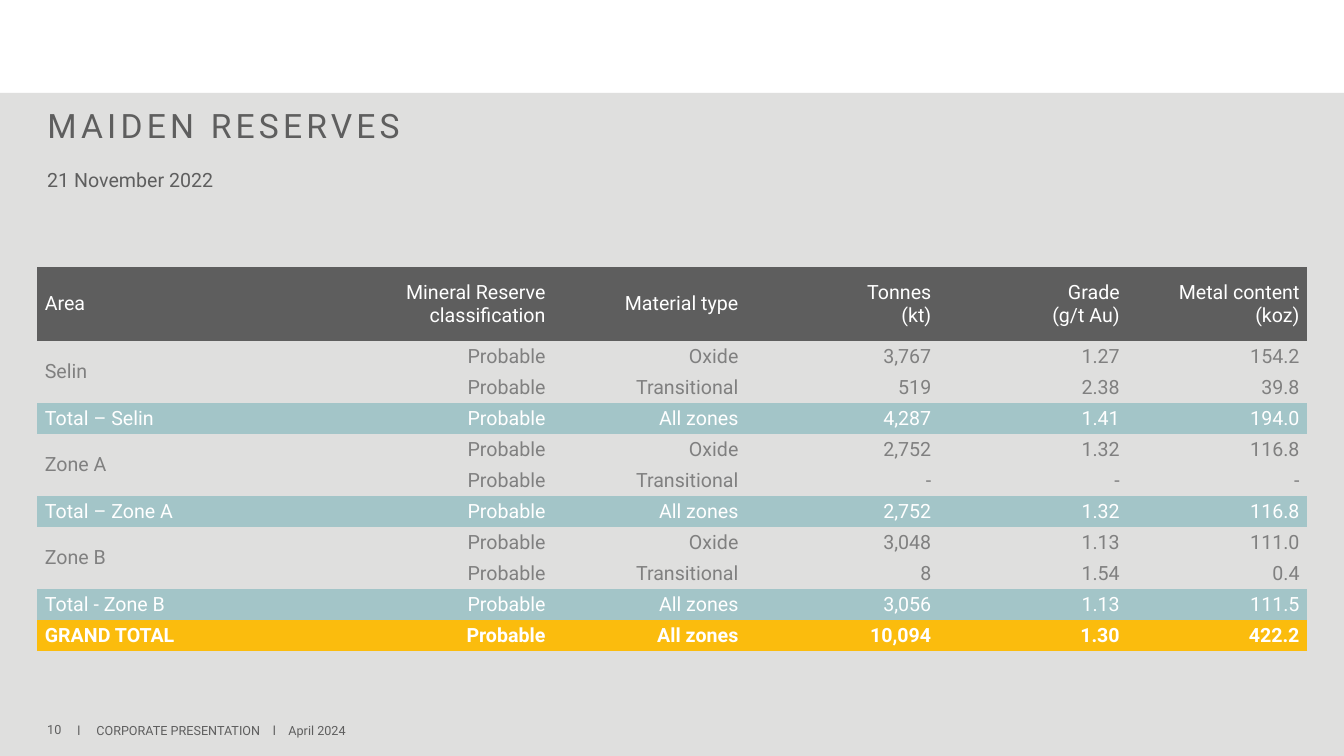
from lxml import etree
from pptx import Presentation
from pptx.dml.color import RGBColor
from pptx.enum.shapes import MSO_SHAPE
from pptx.enum.text import MSO_ANCHOR, MSO_AUTO_SIZE, PP_ALIGN
from pptx.oxml.ns import qn
from pptx.util import Cm, Pt

RECTANGLE = MSO_SHAPE.RECTANGLE
MIDDLE = MSO_ANCHOR.MIDDLE
NO_AUTOFIT = MSO_AUTO_SIZE.NONE
LEFT, RIGHT = PP_ALIGN.LEFT, PP_ALIGN.RIGHT

FONT = "Roboto"
COLORS = {
    "panel": "DFDFDE",
    "dark": "5E5E5E",
    "body": "808080",
    "total": "A3C5C8",
    "grand": "FBBC0D",
    "white": "FFFFFF",
}
NO_STYLE_NO_GRID = "{2D5ABB26-0587-4C30-8999-92F81FD0307C}"

MARGIN = 0.94
CONTENT_WIDTH = 32
COLUMN_WIDTHS = [6.5, 6.5, 4.86, 4.86, 4.75, 4.53]
HEADER_HEIGHT, ROW_HEIGHT = 1.87, 0.78
FOOTER_TABS = [0.48, 4.93, 5.32]

HEADERS = ["Area", "Mineral Reserve classification", "Material type",
           "Tonnes\n(kt)", "Grade\n(g/t Au)", "Metal content (koz)"]
# Row kind, area, material type, tonnes, grade, metal content
RESERVES = [
    ("body", "Selin", "Oxide", "3,767", "1.27", "154.2"),
    ("body", "", "Transitional", "519", "2.38", "39.8"),
    ("total", "Total – Selin", "All zones", "4,287", "1.41", "194.0"),
    ("body", "Zone A", "Oxide", "2,752", "1.32", "116.8"),
    ("body", "", "Transitional", "-", "-", "-"),
    ("total", "Total – Zone A", "All zones", "2,752", "1.32", "116.8"),
    ("body", "Zone B", "Oxide", "3,048", "1.13", "111.0"),
    ("body", "", "Transitional", "8", "1.54", "0.4"),
    ("total", "Total - Zone B", "All zones", "3,056", "1.13", "111.5"),
    ("grand", "GRAND TOTAL", "All zones", "10,094", "1.30", "422.2"),
]


def rgb(name):
    return RGBColor.from_string(COLORS[name])


def style_paragraph(paragraph, size, color, bold=False, alignment=LEFT):
    paragraph.alignment = alignment
    font = paragraph.font
    font.name, font.size, font.bold = FONT, Pt(size), bold
    font.color.rgb = rgb(color)


def place(shape, left, top, width, height):
    shape.left, shape.top = Cm(left), Cm(top)
    shape.width, shape.height = Cm(width), Cm(height)


def add_panel(slide, width, top, height):
    """Draw the grey panel behind everything else."""
    panel = slide.shapes.add_shape(RECTANGLE, 0, Cm(top), width, Cm(height))
    panel.shadow.inherit = False
    panel.fill.solid()
    panel.fill.fore_color.rgb = rgb("panel")
    panel.line.fill.background()
    panel.element.getparent().insert(2, panel.element)


def set_title(slide, text):
    title = slide.shapes.title
    place(title, MARGIN, 2.34, CONTENT_WIDTH, 1.75)
    frame = title.text_frame
    frame.text = text
    frame.auto_size = NO_AUTOFIT
    frame.vertical_anchor = MIDDLE
    paragraph = frame.paragraphs[0]
    paragraph.line_spacing = 0.9
    style_paragraph(paragraph, 24, "dark")
    paragraph.runs[0].font.size = Pt(24)
    paragraph.runs[0]._r.get_or_add_rPr().set("spc", "300")


def add_label(slide, text, left, top, width, height, size, tabs=()):
    box = slide.shapes.add_textbox(Cm(left), Cm(top), Cm(width), Cm(height))
    frame = box.text_frame
    frame.word_wrap = True
    frame.vertical_anchor = MIDDLE
    frame.text = text
    paragraph = frame.paragraphs[0]
    if tabs:
        properties = paragraph._p.get_or_add_pPr()
        tab_list = etree.SubElement(properties, qn("a:tabLst"))
        for position in tabs:
            etree.SubElement(tab_list, qn("a:tab"), pos=str(Cm(position)), algn="l")
    style_paragraph(paragraph, size, "dark")


def fill_cell(cell, text, fill, color, bold, alignment):
    cell.margin_left = cell.margin_right = Cm(0.19)
    cell.margin_top = cell.margin_bottom = 0
    cell.vertical_anchor = MIDDLE
    if fill:
        cell.fill.solid()
        cell.fill.fore_color.rgb = rgb(fill)
    else:
        cell.fill.background()
    cell.text = text
    for paragraph in cell.text_frame.paragraphs:
        style_paragraph(paragraph, 14, color, bold, alignment)


def add_reserves_table(slide):
    rows = [("dark", HEADERS)]
    rows += [(kind, [area, "Probable", *values]) for kind, area, *values in RESERVES]
    height = HEADER_HEIGHT + ROW_HEIGHT * len(RESERVES)
    frame = slide.shapes.add_table(len(rows), len(HEADERS), Cm(MARGIN), Cm(6.73),
                                   Cm(CONTENT_WIDTH), Cm(height))
    table = frame.table
    table.first_row = table.horz_banding = False
    next(frame.element.iter(qn("a:tableStyleId"))).text = NO_STYLE_NO_GRID
    for column, width in zip(table.columns, COLUMN_WIDTHS):
        column.width = Cm(width)
    for row_index, (kind, texts) in enumerate(rows):
        table.rows[row_index].height = Cm(ROW_HEIGHT if row_index else HEADER_HEIGHT)
        is_body = kind == "body"
        for column_index, text in enumerate(texts):
            fill_cell(table.cell(row_index, column_index), text,
                      None if is_body else kind, "body" if is_body else "white",
                      kind == "grand", RIGHT if column_index else LEFT)
        if not texts[0]:
            table.cell(row_index - 1, 0).merge(table.cell(row_index, 0))


def main():
    presentation = Presentation()
    presentation.slide_width, presentation.slide_height = Cm(33.87), Cm(19.05)
    slide = presentation.slides.add_slide(presentation.slide_layouts[5])
    add_panel(slide, presentation.slide_width, 2.34, 16.71)
    set_title(slide, "MAIDEN RESERVES")
    add_label(slide, "l\tCORPORATE PRESENTATION\tl\tApril 2024",
              1.7, 17.91, 11.43, 1.02, 9, FOOTER_TABS)
    add_label(slide, "10", MARGIN, 17.86, 1.88, 1.02, 9)
    add_label(slide, "21 November 2022", MARGIN, 3.89, CONTENT_WIDTH, 1.27, 14)
    add_reserves_table(slide)
    presentation.save("out.pptx")


if __name__ == "__main__":
    main()
